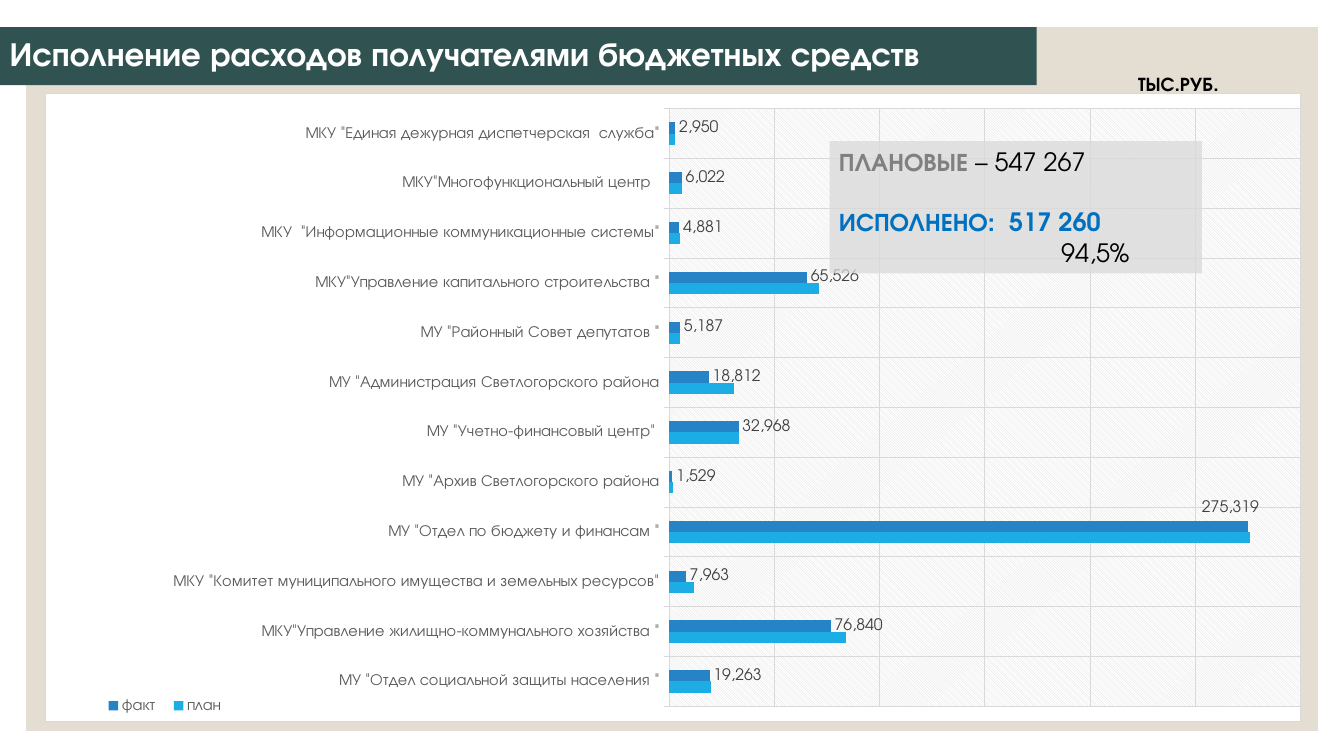
from pptx import Presentation
from pptx.chart.data import CategoryChartData
from pptx.dml.color import RGBColor
from pptx.enum.chart import (XL_CHART_TYPE, XL_LABEL_POSITION, XL_LEGEND_POSITION,
                             XL_TICK_LABEL_POSITION, XL_TICK_MARK)
from pptx.enum.shapes import MSO_SHAPE
from pptx.enum.text import MSO_ANCHOR, MSO_AUTO_SIZE, PP_ALIGN
from pptx.oxml import parse_xml
from pptx.oxml.ns import nsdecls, qn
from pptx.util import Pt

RECT = MSO_SHAPE.RECTANGLE
BARS = XL_CHART_TYPE.BAR_CLUSTERED
BOTTOM = XL_LEGEND_POSITION.BOTTOM
OUTER = XL_LABEL_POSITION.OUTSIDE_END
NO_LABEL = XL_TICK_LABEL_POSITION.NONE
LOW = XL_TICK_LABEL_POSITION.LOW
NO_TICK, TICK = XL_TICK_MARK.NONE, XL_TICK_MARK.OUTSIDE
LEFT = PP_ALIGN.LEFT
TOP, MIDDLE = MSO_ANCHOR.TOP, MSO_ANCHOR.MIDDLE
NO_FIT = MSO_AUTO_SIZE.NONE

FONT = "TeX Gyre Adventor"
WHITE = RGBColor(0xFF, 0xFF, 0xFF)
BLACK = RGBColor(0, 0, 0)
SAND = RGBColor(0xE3, 0xDE, 0xD1)
GREEN = RGBColor(0x30, 0x52, 0x50)
PALE = RGBColor(0xD9, 0xD9, 0xD9)
GRAY = RGBColor(0x80, 0x80, 0x80)
DIM = RGBColor(0x59, 0x59, 0x59)
DARK = RGBColor(0x40, 0x40, 0x40)
BLUE = RGBColor(0x00, 0x70, 0xC0)
SKY = RGBColor(0x1C, 0xAD, 0xE4)
DEEP = RGBColor(0x26, 0x83, 0xC6)

PX = 914400 / 95

# Name, plan, fact; listed from the bottom row up
ROWS = [
    ('МУ "Отдел социальной защиты населения "', 20000, 19263),
    ('МКУ"Управление жилищно-коммунального хозяйства "', 84000, 76840),
    ('МКУ "Комитет муниципального имущества и земельных ресурсов"', 12000, 7963),
    ('МУ "Отдел по бюджету и финансам "', 276000, 275319),
    ('МУ "Архив Светлогорского района', 2000, 1529),
    ('МУ "Учетно-финансовый центр" ', 33000, 32968),
    ('МУ "Администрация Светлогорского района', 31000, 18812),
    ('МУ "Районный Совет депутатов "', 5000, 5187),
    ('МКУ"Управление капитального строительства "', 71000, 65526),
    ('МКУ  "Информационные коммуникационные системы"', 5000, 4881),
    ('МКУ"Многофункциональный центр  ', 6000, 6022),
    ('МКУ "Единая дежурная диспетчерская  служба"', 3000, 2950),
]


def px(*nums):
    return [round(n * PX) for n in nums]


def style(font, size, color, bold=False):
    font.name, font.size, font.bold = FONT, Pt(size), bold
    font.color.rgb = color


def write(para, text, size=19.1, color=BLACK, bold=False):
    para.alignment = LEFT
    run = para.add_run()
    run.text = text
    style(run.font, size, color, bold)


def frame(shape, anchor=TOP):
    body = shape.text_frame
    body.word_wrap, body.auto_size = True, NO_FIT
    body.vertical_anchor = anchor
    return body


def block(slide, box, color):
    shape = slide.shapes.add_shape(RECT, *px(*box))
    shape.shadow.inherit = False
    shape.fill.solid()
    shape.fill.fore_color.rgb = color
    shape.line.fill.background()
    return shape


def place(node, index, **spots):
    """Give a chart part a manual layout."""
    old = node.find(qn("c:layout"))
    if old is not None:
        node.remove(old)
    tags = "".join(f'<c:{k} val="{v}"/>' for k, v in spots.items())
    node.insert(index, parse_xml(
        f'<c:layout {nsdecls("c")}><c:manualLayout>{tags}</c:manualLayout></c:layout>'))


def paint(fill, line=""):
    return parse_xml(f'<c:spPr {nsdecls("c", "a")}>{fill}{line}</c:spPr>')


def solid(color):
    return f'<a:solidFill><a:srgbClr val="{color}"/></a:solidFill>'


def grid(axis):
    axis.has_major_gridlines = True
    line = axis.major_gridlines.format.line
    line.color.rgb, line.width = PALE, Pt(0.75)
    axis.minor_tick_mark = NO_TICK
    style(axis.tick_labels.font, 12, DIM)


def add_title(slide):
    title = slide.shapes.title
    title.left, title.top, title.width, title.height = px(0, 27, 1036, 58)
    title.fill.solid()
    title.fill.fore_color.rgb = GREEN
    para = frame(title, MIDDLE).paragraphs[0]
    para.line_spacing = 0.9
    write(para, "Исполнение расходов получателями бюджетных средств",
          size=25.4, color=WHITE, bold=True)


def add_bars(slide):
    names, plan, fact = zip(*ROWS)
    data = CategoryChartData(number_format="#,##0")
    data.categories = names
    data.add_series("план", plan)
    data.add_series("факт", fact)
    chart = slide.shapes.add_chart(BARS, *px(45, 93, 1255, 628), data).chart
    chart.has_title = False
    style(chart.font, 10, BLACK)

    # Axes
    cats, vals = chart.category_axis, chart.value_axis
    grid(cats)
    cats.major_tick_mark = TICK
    cats.tick_label_position = LOW
    cats.format.line.color.rgb, cats.format.line.width = PALE, Pt(0.75)
    grid(vals)
    vals.major_tick_mark = NO_TICK
    vals.tick_label_position = NO_LABEL
    vals.format.line.fill.background()
    vals.minimum_scale, vals.maximum_scale, vals.major_unit = 0, 300000, 50000

    # Series and labels
    plot = chart.plots[0]
    plot.gap_width, plot.overlap, plot.vary_by_categories = 247, 0, False
    for row, color in zip(plot.series, (SKY, DEEP)):
        row.format.fill.solid()
        row.format.fill.fore_color.rgb = color
        row.invert_if_negative = False
    done = plot.series[1]
    labels = done.data_labels
    labels.show_value, labels.position = True, OUTER
    labels.number_format, labels.number_format_is_linked = "#,##0", False
    style(labels.font, 12, DARK)
    peak = done.points[3].data_label
    style(peak.font, 12, DARK)
    peak.position = OUTER
    place(done._element.find(".//" + qn("c:dLbl")), 1, x=-0.04, y=-0.03)

    # Legend
    chart.has_legend = True
    legend = chart.legend
    legend.position, legend.include_in_layout = BOTTOM, False
    style(legend.font, 12, DIM)
    place(legend._element, 1, xMode="edge", yMode="edge", x=0.04, y=0.96, w=0.11, h=0.03)

    # Plot area and backgrounds
    space = chart._chartSpace
    area = space.find(".//" + qn("c:plotArea"))
    place(area, 0, layoutTarget="inner", xMode="edge", yMode="edge",
          x=0.497, y=0.024, w=0.503, h=0.952)
    area.append(paint(
        f'<a:pattFill prst="ltDnDiag"><a:fgClr><a:srgbClr val="{PALE}"/></a:fgClr>'
        f'<a:bgClr><a:srgbClr val="{WHITE}"/></a:bgClr></a:pattFill>'))
    space.find(qn("c:chart")).addnext(
        paint(solid(WHITE), f'<a:ln w="9525">{solid(PALE)}</a:ln>'))


def add_totals(slide):
    shape = block(slide, (829, 141, 372, 132), PALE)
    tint = shape._element.spPr.find(".//" + qn("a:srgbClr"))
    tint.append(parse_xml(f'<a:alpha {nsdecls("a")} val="74000"/>'))
    body = frame(shape)
    para = body.paragraphs[0]
    write(para, "ПЛАНОВЫЕ ", color=GRAY, bold=True)
    write(para, "– 547 267")
    para = body.add_paragraph()
    para.space_before = Pt(23)
    write(para, "ИСПОЛНЕНО:  517 260", color=BLUE, bold=True)
    para = body.add_paragraph()
    write(para, "94,5%")
    para._p.get_or_add_pPr().set("marL", str(px(222)[0]))


def add_unit(slide):
    note = slide.shapes.add_textbox(*px(1128, 67, 119, 33))
    write(frame(note).paragraphs[0], "ТЫС.РУБ.", size=14.8, bold=True)


def main():
    deck = Presentation()
    deck.slide_width, deck.slide_height = px(1343, 755)
    slide = deck.slides.add_slide(deck.slide_layouts[5])
    panel = block(slide, (26, 27, 1291, 703), SAND)
    slide.shapes._spTree.insert(2, panel._element)  # behind the title
    add_title(slide)
    add_bars(slide)
    add_totals(slide)
    add_unit(slide)
    deck.save("out.pptx")


if __name__ == "__main__":
    main()
